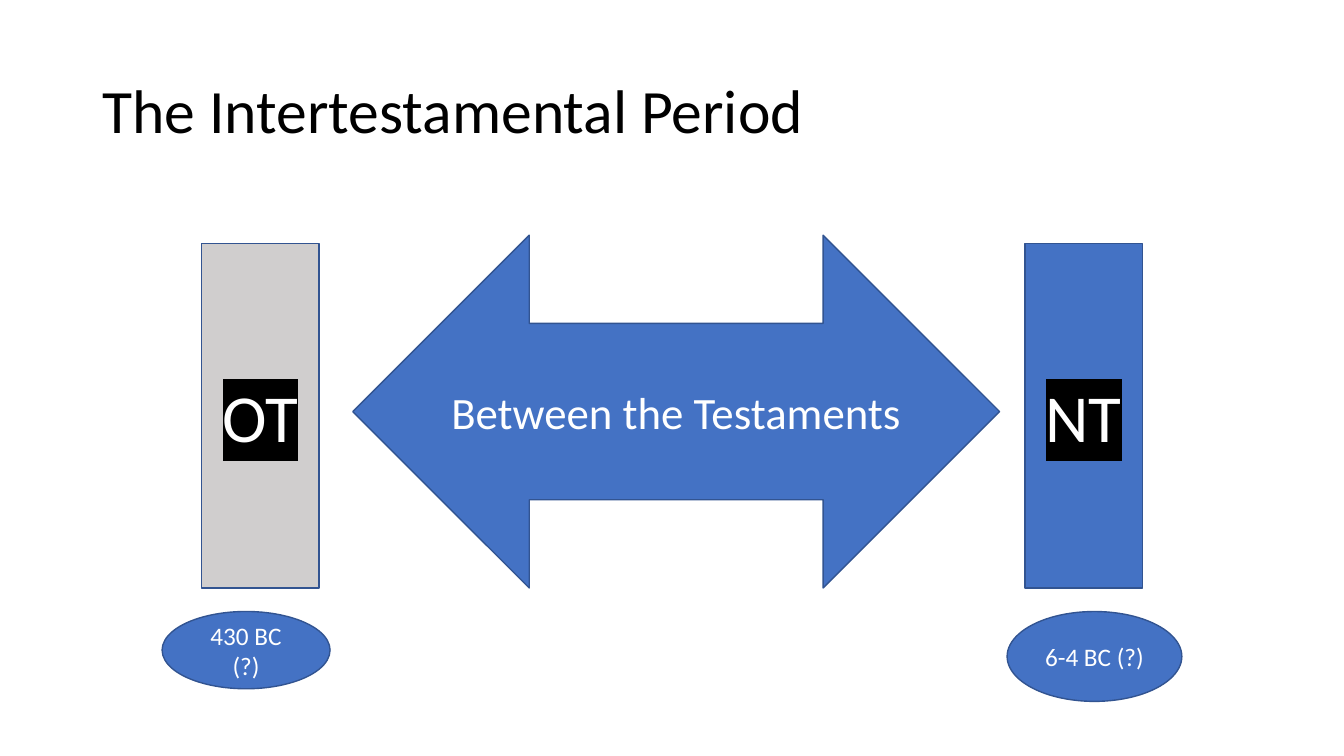
from lxml.etree import SubElement
from pptx import Presentation
from pptx.dml.color import RGBColor
from pptx.enum.shapes import MSO_SHAPE
from pptx.enum.text import MSO_ANCHOR, PP_ALIGN
from pptx.oxml.ns import qn
from pptx.util import Inches, Pt

BLACK = RGBColor(0x00, 0x00, 0x00)
WHITE = RGBColor(0xFF, 0xFF, 0xFF)
BLUE = RGBColor(0x44, 0x72, 0xC4)
OUTLINE = RGBColor(0x32, 0x54, 0x91)
GRAY = RGBColor(0xD0, 0xCE, 0xCE)


class TimelineSlide:
    """Slide style on a grid of 160 columns by 90 rows."""
    font_name = "Calibri"
    columns, rows = 160, 90

    def __init__(self, deck):
        self.deck = deck
        self.page = deck.slides.add_slide(deck.slide_layouts[5])

    def area(self, column, row, width, height):
        across = self.deck.slide_width / self.columns
        down = self.deck.slide_height / self.rows
        return (round(column * across), round(row * down),
                round(width * across), round(height * down))

    def label(self, box, text, size, color, align):
        frame = box.text_frame
        frame.word_wrap = True
        frame.vertical_anchor = MSO_ANCHOR.MIDDLE
        para = frame.paragraphs[0]
        para.alignment = align
        para.font.name = self.font_name
        para.font.size = Pt(size)
        para.font.color.rgb = color
        span = para.add_run()
        span.text = text
        return para, span

    def title(self, text, *place):
        box = self.page.shapes.title
        box.left, box.top, box.width, box.height = self.area(*place)
        para, _ = self.label(box, text, 44, BLACK, PP_ALIGN.LEFT)
        para.line_spacing = 0.9

    def shape(self, kind, text, size, *place, fill=BLUE):
        box = self.page.shapes.add_shape(kind, *self.area(*place))
        box.shadow.inherit = False
        box.fill.solid()
        box.fill.fore_color.rgb = fill
        box.line.color.rgb = OUTLINE
        box.line.width = Pt(1)
        return self.label(box, text, size, WHITE, PP_ALIGN.CENTER)

    def testament(self, text, column, fill):
        _, span = self.shape(MSO_SHAPE.RECTANGLE, text, 48,
                             column, 29, 14, 41, fill=fill)
        highlight = SubElement(span.font._element, qn("a:highlight"))
        SubElement(highlight, qn("a:srgbClr"), val=str(BLACK))

    def date(self, text, column, width, height):
        self.shape(MSO_SHAPE.OVAL, text, 18, column, 72.8, width, height)


def main():
    deck = Presentation()
    deck.slide_width, deck.slide_height = Inches(13.33), Inches(7.5)
    slide = TimelineSlide(deck)

    # Title and the span between the testaments
    slide.title("The Intertestamental Period", 11, 4.8, 138, 17.4)
    slide.shape(MSO_SHAPE.LEFT_RIGHT_ARROW, "Between the Testaments", 32,
                42, 28, 77, 42)

    # Testaments on either side
    slide.testament("OT", 24, GRAY)
    slide.testament("NT", 122, BLUE)

    # Dates below them
    slide.date("430 BC (?)", 19.3, 20, 9.2)
    slide.date("6-4 BC (?)", 119.9, 20.8, 10.7)

    deck.save("out.pptx")


if __name__ == "__main__":
    main()
